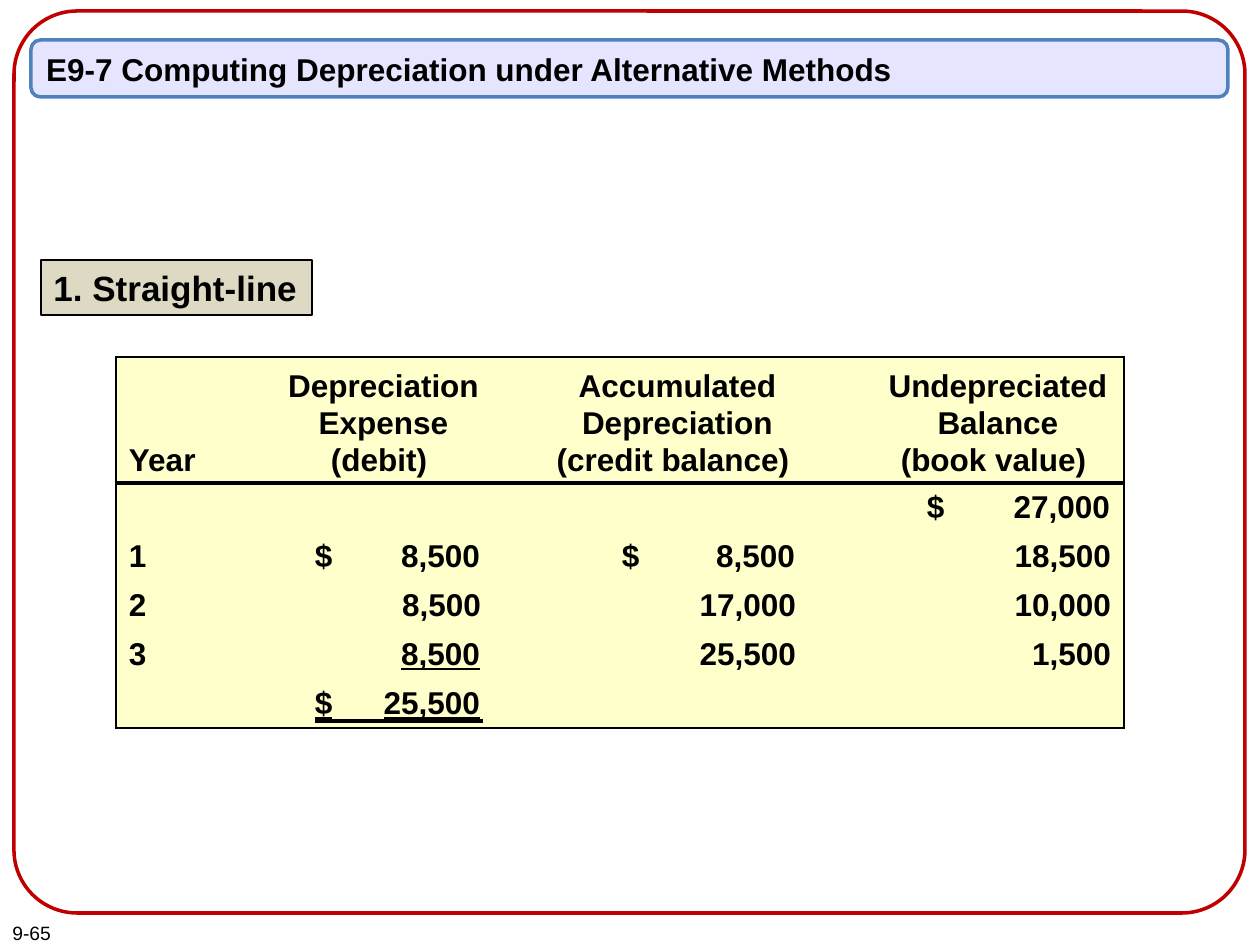
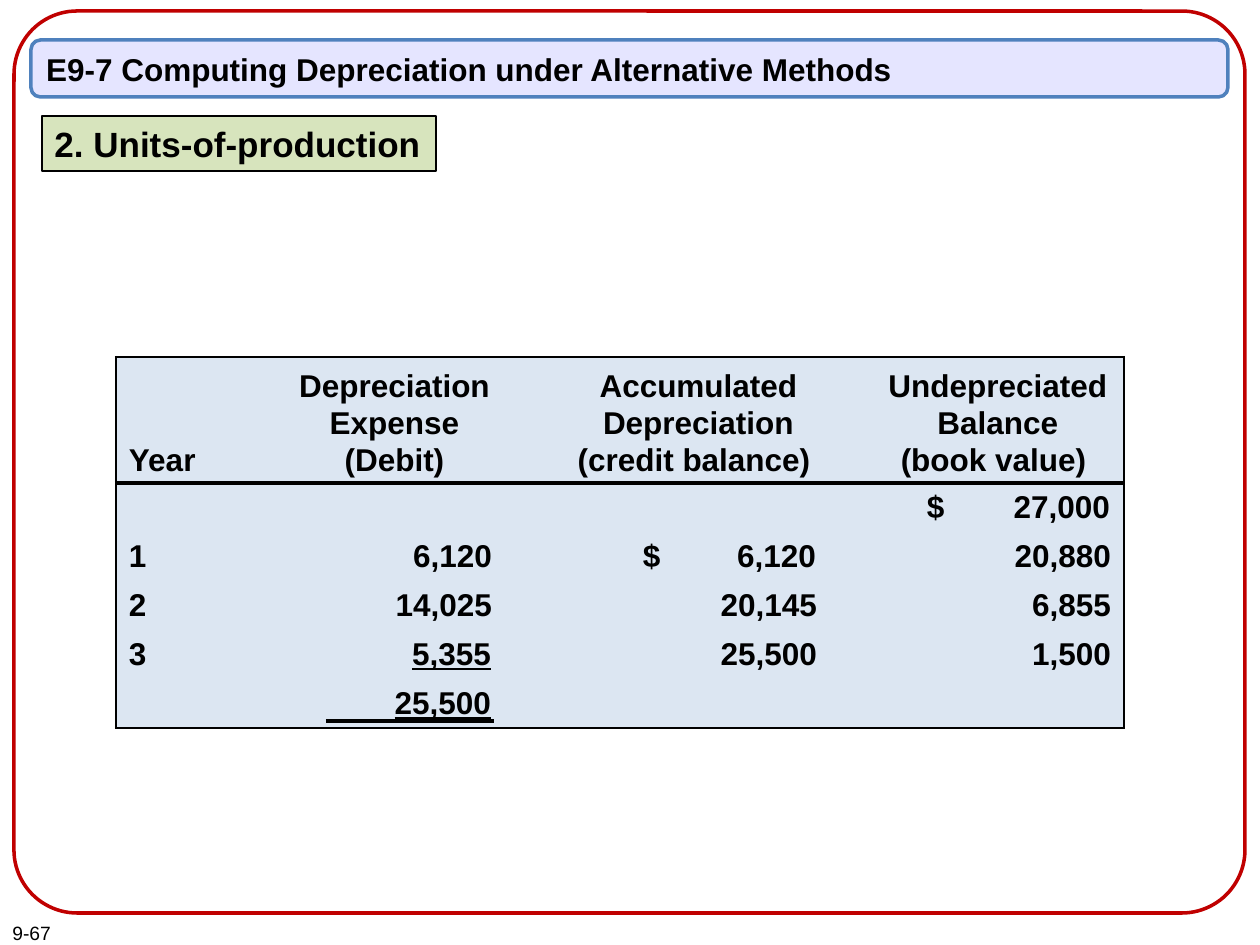
from dataclasses import dataclass
from typing import Any, NamedTuple

from lxml.etree import SubElement
from pptx import Presentation
from pptx.dml.color import RGBColor
from pptx.enum.shapes import MSO_CONNECTOR, MSO_SHAPE
from pptx.enum.text import MSO_ANCHOR, PP_ALIGN
from pptx.oxml.ns import qn
from pptx.slide import Slide
from pptx.util import Emu, Pt

# Scale: 126 px to the inch
EMU_PER_PX = 914400 / 126
PAGE_WIDTH, PAGE_HEIGHT = 1260, 945

# Colours
BLACK = RGBColor(0x00, 0x00, 0x00)
FRAME_RED = RGBColor(0xC0, 0x00, 0x00)
TITLE_LAVENDER = RGBColor(0xE5, 0xE5, 0xFF)
TITLE_BLUE = RGBColor(0x4F, 0x81, 0xBD)
TAN = RGBColor(0xDD, 0xD9, 0xC3)
GREEN = RGBColor(0xD7, 0xE4, 0xBD)
YELLOW = RGBColor(0xFF, 0xFF, 0xCC)
PALE_BLUE = RGBColor(0xDC, 0xE6, 0xF2)

# Text formats
NUMBER_FONT = {"name": "Arial", "size": Pt(11), "bold": False}
BODY_FONT = {"name": "Arial", "size": Pt(18), "bold": True}
LABEL_FONT = {"name": "Arial", "size": Pt(20), "bold": True}

TITLE = "E9-7 Computing Depreciation under Alternative Methods"

# Schedule geometry in px
TABLE_LEFT, TABLE_TOP, TABLE_RIGHT = 116, 357, 1124
HEADER_HEIGHT, ROW_HEIGHT = 126, 49
INSET = 13
TOTAL_RULE_Y = 721


class Box(NamedTuple):
    left: int
    top: int
    width: int
    height: int


class Figure(NamedTuple):
    """An amount; lead is the px from its dollar sign or rule to its right end."""
    amount: str
    sign: str = ""
    lead: int = 0
    underline: bool = False


class Column(NamedTuple):
    left: int
    right: int
    heading: str
    figures: list[Figure]


@dataclass
class Method:
    number: str
    label: str
    label_box: Box
    label_fill: RGBColor
    table_fill: RGBColor
    columns: list[Column]


def px(length: int) -> Emu:
    return Emu(round(length * EMU_PER_PX))


def apply(target: Any, values: dict[str, Any]) -> None:
    for name, value in values.items():
        setattr(target, name, value)


def write(para: Any, text: str, font: dict[str, Any], underline: bool = False) -> None:
    span = para.add_run()
    span.text = text
    apply(span.font, font)
    span.font.color.rgb = BLACK
    if underline:
        span.font.underline = True


def add_box(page: Slide, preset: MSO_SHAPE, box: Box, line: RGBColor, weight: float,
            fill: RGBColor | None = None) -> Any:
    shape = page.shapes.add_shape(preset, *map(px, box))
    shape.shadow.inherit = False
    shape.line.color.rgb = line
    shape.line.width = Pt(weight)
    if fill is None:
        shape.fill.background()
    else:
        shape.fill.solid()
        shape.fill.fore_color.rgb = fill
    return shape


def label_shape(shape: Any, text: str, font: dict[str, Any], wrap: bool = True) -> None:
    frame = shape.text_frame
    apply(frame, {"word_wrap": wrap, "vertical_anchor": MSO_ANCHOR.MIDDLE})
    frame.paragraphs[0].alignment = PP_ALIGN.LEFT
    write(frame.paragraphs[0], text, font)


def add_page_base(page: Slide, number: str) -> None:
    """Page number, red frame and title band."""
    number_box = page.shapes.add_textbox(*map(px, Box(0, 914, 179, 37)))
    label_shape(number_box, number, NUMBER_FONT)
    frame = add_box(page, MSO_SHAPE.ROUNDED_RECTANGLE, Box(14, 11, 1231, 902), FRAME_RED, 2)
    frame.adjustments[0] = 0.07
    band = add_box(page, MSO_SHAPE.ROUNDED_RECTANGLE, Box(31, 40, 1197, 57),
                   TITLE_BLUE, 2, TITLE_LAVENDER)
    label_shape(band, TITLE, BODY_FONT)


def set_borders(cell: Any, weights: dict[str, float]) -> None:
    """Draw the named sides and hide the others."""
    properties = cell._tc.get_or_add_tcPr()
    for side in ("lnL", "lnR", "lnT", "lnB"):
        weight = weights.get(side, 0)
        border = SubElement(properties, qn(f"a:{side}"), w=str(Pt(weight)))
        if weight:
            paint = SubElement(border, qn("a:solidFill"))
            SubElement(paint, qn("a:srgbClr"), val=str(BLACK))
        else:
            SubElement(border, qn("a:noFill"))


def write_heading(cell: Any, heading: str, alignment: PP_ALIGN) -> None:
    cell.vertical_anchor = MSO_ANCHOR.BOTTOM
    cell.margin_bottom = px(5)
    frame = cell.text_frame
    for index, line in enumerate(heading.split("\n")):
        para = frame.add_paragraph() if index else frame.paragraphs[0]
        apply(para, {"alignment": alignment, "line_spacing": 1.05})
        write(para, line, BODY_FONT)


def write_figure(cell: Any, figure: Figure, width: int) -> None:
    para = cell.text_frame.paragraphs[0]
    if not figure.lead:
        para.alignment = PP_ALIGN.RIGHT
        write(para, figure.amount, BODY_FONT)
        return
    # A right tab sets the amount at the column edge
    cell.margin_left = px(width - INSET - figure.lead)
    para.alignment = PP_ALIGN.LEFT
    stops = SubElement(para._p.get_or_add_pPr(), qn("a:tabLst"))
    SubElement(stops, qn("a:tab"), pos=str(px(figure.lead - 1)), algn="r")
    write(para, f"{figure.sign}\t{figure.amount}", BODY_FONT, figure.underline)


def add_schedule(page: Slide, method: Method) -> None:
    columns = method.columns
    row_count = 6
    body_height = (row_count - 1) * ROW_HEIGHT
    table = page.shapes.add_table(
        row_count, len(columns) + 1, px(TABLE_LEFT), px(TABLE_TOP),
        px(TABLE_RIGHT - TABLE_LEFT), px(HEADER_HEIGHT + body_height)).table
    table.horz_banding = False

    # Each column ends at the right edge of its figures
    edges = [TABLE_LEFT, columns[0].left, *(column.right for column in columns)]
    widths = [end - start for start, end in zip(edges, edges[1:])]
    for grid_column, width in zip(table.columns, widths):
        grid_column.width = px(width)
    for index, row in enumerate(table.rows):
        row.height = px(ROW_HEIGHT if index else HEADER_HEIGHT)

    # Borders, fill and margins
    last_row, last_column = row_count - 1, len(columns)
    for row_index in range(row_count):
        for column_index in range(last_column + 1):
            cell = table.cell(row_index, column_index)
            set_borders(cell, {
                "lnL": 1.5 if column_index == 0 else 0,
                "lnR": 1.5 if column_index == last_column else 0,
                "lnT": {0: 1.5, 1: 2}.get(row_index, 0),
                "lnB": {0: 2, last_row: 1.5}.get(row_index, 0)})
            cell.fill.solid()
            cell.fill.fore_color.rgb = method.table_fill
            apply(cell, {"margin_left": px(INSET), "margin_right": px(INSET),
                         "margin_top": 0, "margin_bottom": 0,
                         "vertical_anchor": MSO_ANCHOR.MIDDLE})

    # Years
    write_heading(table.cell(0, 0), "Year", PP_ALIGN.LEFT)
    for year in range(1, 4):
        write(table.cell(year + 1, 0).text_frame.paragraphs[0], str(year), BODY_FONT)

    # Amounts; only the balance column has an opening figure
    for index, column in enumerate(columns, start=1):
        heading_cell = table.cell(0, index)
        heading_cell.margin_left = px(column.left - edges[index])
        heading_cell.margin_right = 0
        write_heading(heading_cell, column.heading, PP_ALIGN.CENTER)
        first_row = 1 if index == last_column else 2
        for row_index, figure in enumerate(column.figures, start=first_row):
            write_figure(table.cell(row_index, index), figure, widths[index])

    # Rule under the total
    expense = columns[0]
    rule = page.shapes.add_connector(
        MSO_CONNECTOR.STRAIGHT, px(expense.left + 42), px(TOTAL_RULE_Y),
        px(expense.right - 11), px(TOTAL_RULE_Y))
    rule.line.color.rgb = BLACK
    rule.line.width = Pt(2)
    SubElement(rule._element.spPr, qn("a:effectLst"))


def balance_column(*amounts: str) -> Column:
    figures = [Figure("27,000", "$", 184), *map(Figure, amounts)]
    return Column(872, TABLE_RIGHT, "Undepreciated\nBalance\n(book value) ", figures)


def accumulated_column(left: int, first: str, *amounts: str) -> Column:
    figures = [Figure(first, "$", 174), *map(Figure, amounts)]
    return Column(left, left + 263, "Accumulated\nDepreciation\n(credit balance) ", figures)


METHODS = [
    Method("9-65", "1. Straight-line", Box(41, 260, 271, 55), TAN, YELLOW, [
        Column(273, 494, "Depreciation\nExpense\n(debit) ", [
            Figure("8,500", "$", 166), Figure("8,500"),
            Figure("8,500", "", 166, True), Figure("25,500", "$", 166, True)]),
        accumulated_column(546, "8,500", "17,000", "25,500"),
        balance_column("18,500", "10,000", "1,500")]),
    Method("9-67", "2. Units-of-production", Box(42, 116, 394, 55), GREEN, PALE_BLUE, [
        Column(284, 505, "Depreciation\nExpense\n(Debit)", [
            Figure("6,120"), Figure("14,025"),
            Figure("5,355", "", 149, True), Figure("25,500", "", 166, True)]),
        accumulated_column(567, "6,120", "20,145", "25,500"),
        balance_column("20,880", "6,855", "1,500")]),
]


def main() -> None:
    deck = Presentation()
    deck.slide_width, deck.slide_height = px(PAGE_WIDTH), px(PAGE_HEIGHT)
    for method in METHODS:
        page = deck.slides.add_slide(deck.slide_layouts[6])
        add_page_base(page, method.number)
        tag = add_box(page, MSO_SHAPE.RECTANGLE, method.label_box, BLACK, 0.75,
                      method.label_fill)
        label_shape(tag, method.label, LABEL_FONT, wrap=False)
        add_schedule(page, method)
    deck.save("out.pptx")


if __name__ == "__main__":
    main()
